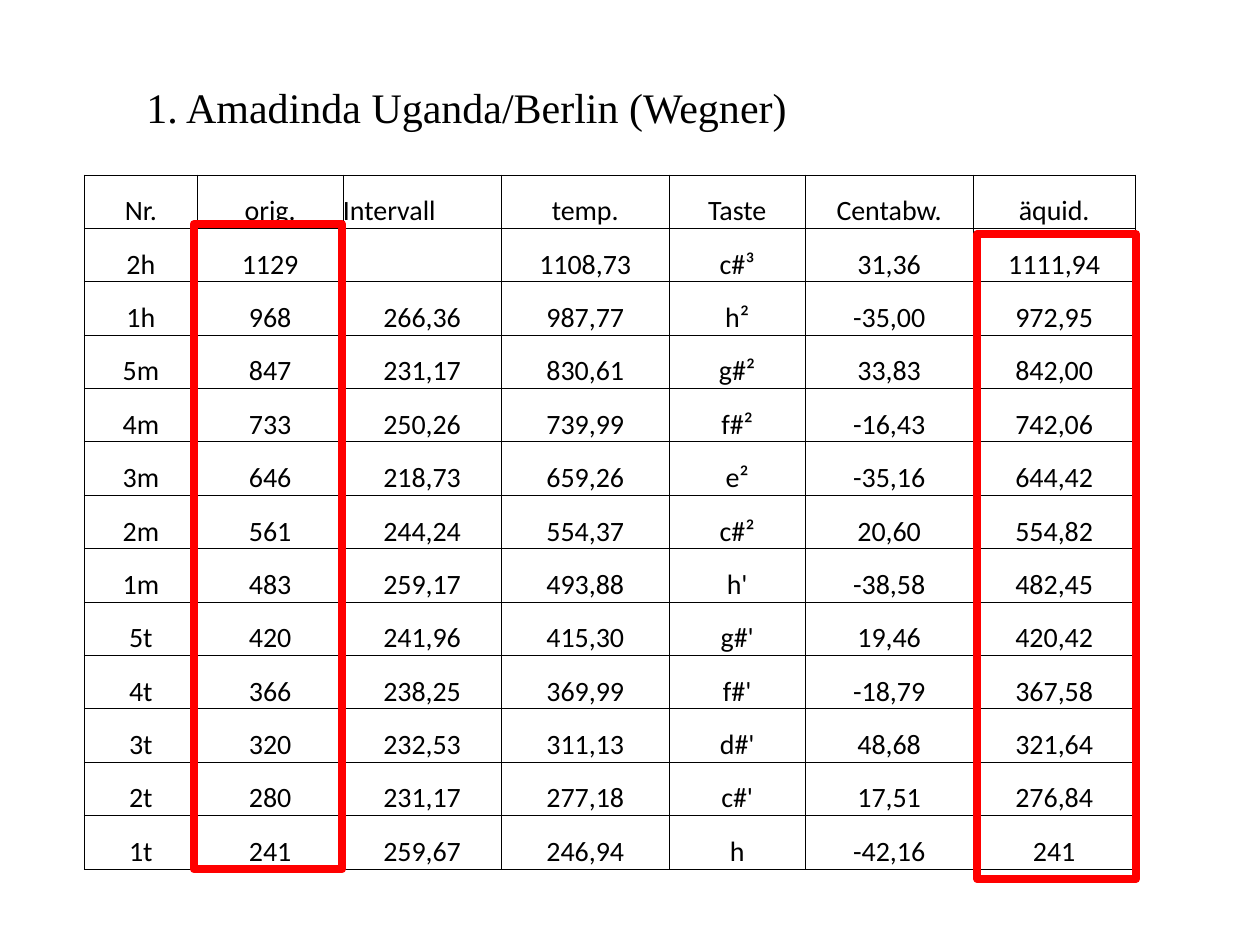
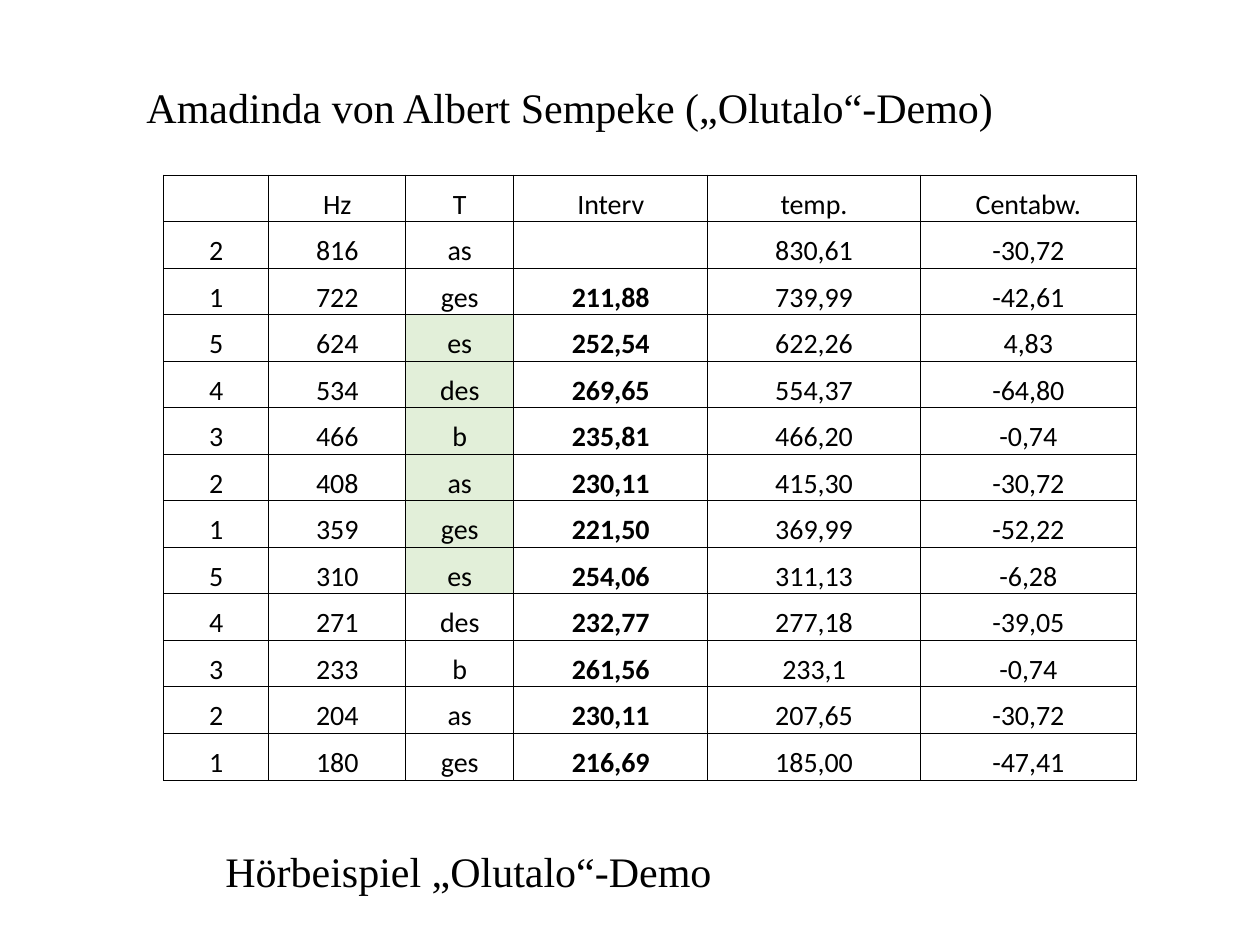
import pptx
import pptx.util
import pptx.dml.color
import pptx.enum.shapes
import pptx.enum.text
import pptx.oxml
import pptx.oxml.ns

Pt = pptx.util.Pt
RGBColor = pptx.dml.color.RGBColor
PP_ALIGN = pptx.enum.text.PP_ALIGN

BLACK = RGBColor(0x00, 0x00, 0x00)
WHITE = RGBColor(0xFF, 0xFF, 0xFF)
RED = RGBColor(0xFF, 0x00, 0x00)
GREEN = RGBColor(0xE2, 0xEF, 0xD9)
TITLE_FONT = "Times New Roman"
TABLE_FONT = "Calibri"
TABLE_TOP = 100

WEGNER_ROWS = """\
Nr.|orig.|Intervall|temp.|Taste|Centabw.|äquid.
2h|1129||1108,73|c#³|31,36|1111,94
1h|968|266,36|987,77|h²|-35,00|972,95
5m|847|231,17|830,61|g#²|33,83|842,00
4m|733|250,26|739,99|f#²|-16,43|742,06
3m|646|218,73|659,26|e²|-35,16|644,42
2m|561|244,24|554,37|c#²|20,60|554,82
1m|483|259,17|493,88|h'|-38,58|482,45
5t|420|241,96|415,30|g#'|19,46|420,42
4t|366|238,25|369,99|f#'|-18,79|367,58
3t|320|232,53|311,13|d#'|48,68|321,64
2t|280|231,17|277,18|c#'|17,51|276,84
1t|241|259,67|246,94|h|-42,16|241"""

SEMPEKE_ROWS = """\
|Hz|T|Interv|temp.|Centabw.
2|816|as||830,61|-30,72
1|722|ges|211,88|739,99|-42,61
5|624|es|252,54|622,26|4,83
4|534|des|269,65|554,37|-64,80
3|466|b|235,81|466,20|-0,74
2|408|as|230,11|415,30|-30,72
1|359|ges|221,50|369,99|-52,22
5|310|es|254,06|311,13|-6,28
4|271|des|232,77|277,18|-39,05
3|233|b|261,56|233,1|-0,74
2|204|as|230,11|207,65|-30,72
1|180|ges|216,69|185,00|-47,41"""


def set_heading(shape, text, left, top, width):
    shape.left, shape.top, shape.width, shape.height = Pt(left), Pt(top), Pt(width), Pt(36)
    frame = shape.text_frame
    frame.text = text
    frame.word_wrap = False
    frame.auto_size = pptx.enum.text.MSO_AUTO_SIZE.SHAPE_TO_FIT_TEXT
    frame.vertical_anchor = pptx.enum.text.MSO_ANCHOR.TOP
    paragraph = frame.paragraphs[0]
    paragraph.alignment = PP_ALIGN.LEFT
    font = paragraph.runs[0].font
    font.name, font.size, font.color.rgb = TITLE_FONT, Pt(24), BLACK


def add_tuning_table(slide, text, left, column_widths, row_height, margin):
    rows = [line.split("|") for line in text.split("\n")]
    table = slide.shapes.add_table(
        len(rows), len(column_widths), Pt(left), Pt(TABLE_TOP),
        Pt(sum(column_widths)), Pt(row_height * len(rows))).table
    table.first_row = table.horz_banding = False
    for column, width in zip(table.columns, column_widths):
        column.width = Pt(width)
    for row, values in zip(table.rows, rows):
        row.height = Pt(row_height)
        for cell, value in zip(row.cells, values):
            cell.margin_left = cell.margin_right = cell.margin_top = Pt(margin)
            cell.margin_bottom = 0
            cell.vertical_anchor = pptx.enum.text.MSO_ANCHOR.BOTTOM
            properties = cell._tc.get_or_add_tcPr()
            for side in ("lnL", "lnR", "lnT", "lnB"):
                properties.append(pptx.oxml.parse_xml(
                    f'<a:{side} {pptx.oxml.ns.nsdecls("a")} w="{Pt(0.5)}">'
                    f'<a:solidFill><a:srgbClr val="{BLACK}"/></a:solidFill></a:{side}>'))
            cell.fill.solid()
            cell.fill.fore_color.rgb = WHITE
            cell.text_frame.text = value
            paragraph = cell.text_frame.paragraphs[0]
            paragraph.alignment = PP_ALIGN.CENTER
            for run in paragraph.runs:
                run.font.name, run.font.size = TABLE_FONT, Pt(16)
                run.font.color.rgb = BLACK
    return table


presentation = pptx.Presentation()
presentation.slide_width, presentation.slide_height = Pt(720), Pt(540)
title_only = presentation.slide_layouts[5]

# Slide 1: Wegner's measurements
slide = presentation.slides.add_slide(title_only)
set_heading(slide.shapes.title, "1. Amadinda Uganda/Berlin (Wegner)", 76.5, 43.2, 383.8)
table = add_tuning_table(slide, WEGNER_ROWS, 48.2,
                         [64.6, 83.2, 90.5, 96, 77.7, 96, 92.6], 30.52, 0)
table.cell(0, 2).text_frame.paragraphs[0].alignment = PP_ALIGN.LEFT

# Red frames around the measured and the equidistant pitches
for left, top, width in ((110.7, 128.1, 84.9), (558.5, 133.8, 90.7)):
    frame = slide.shapes.add_shape(pptx.enum.shapes.MSO_SHAPE.RECTANGLE,
                                   Pt(left), Pt(top), Pt(width), Pt(368.6))
    frame.shadow.inherit = False
    frame.fill.background()
    frame.line.color.rgb = RED
    frame.line.width = Pt(4.5)

# Slide 2: Sempeke's instrument
slide = presentation.slides.add_slide(title_only)
set_heading(slide.shapes.title, "Amadinda von Albert Sempeke („Olutalo“-Demo)", 76.5, 43.2, 514.8)
set_heading(slide.shapes.add_textbox(0, 0, 0, 0), "Hörbeispiel „Olutalo“-Demo",
            121.7, 479.8, 295.2)
table = add_tuning_table(slide, SEMPEKE_ROWS, 93.4,
                         [60.2, 78.3, 61.7, 110.9, 121.5, 123.4], 26.6, 0.6)

# Bold intervals and the shaded key range
for row_index in range(2, 13):
    table.cell(row_index, 3).text_frame.paragraphs[0].runs[0].font.bold = True
for row_index in range(3, 9):
    table.cell(row_index, 2).fill.fore_color.rgb = GREEN

presentation.save("out.pptx")
